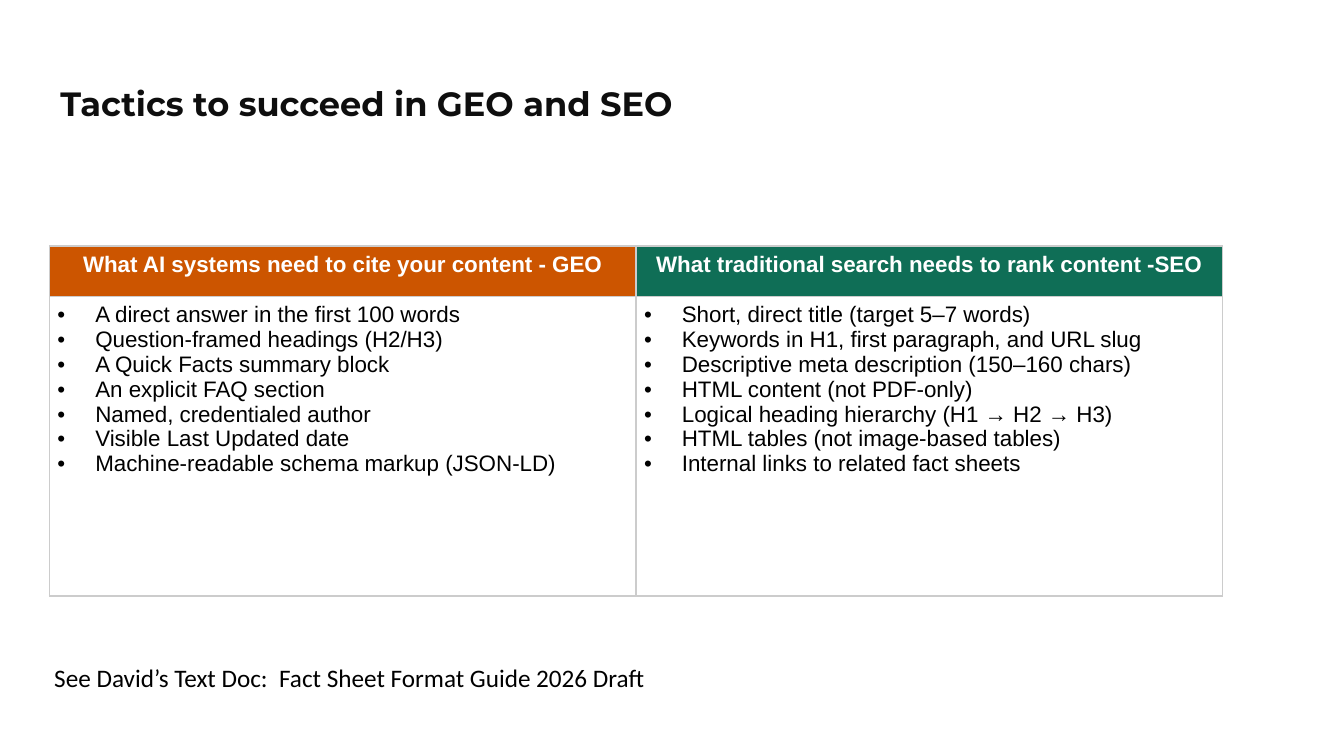
from dataclasses import dataclass

from lxml import etree
from pptx import Presentation
from pptx.dml.color import RGBColor
from pptx.enum.text import MSO_ANCHOR, MSO_AUTO_SIZE, PP_ALIGN
from pptx.oxml.ns import qn
from pptx.util import Pt

LEFT, CENTER = PP_ALIGN.LEFT, PP_ALIGN.CENTER
TOP = MSO_ANCHOR.TOP
NO_FIT, GROW = MSO_AUTO_SIZE.NONE, MSO_AUTO_SIZE.SHAPE_TO_FIT_TEXT
TITLE_ONLY = 5


@dataclass(frozen=True)
class Theme:
    ink: str = "0E0E0E"
    black: str = "000000"
    white: str = "FFFFFF"
    orange: str = "CC5500"
    green: str = "0F6E56"
    border: str = "CCCCCC"
    title_font: str = "Montserrat"
    table_font: str = "Arial"
    note_font: str = "Calibri"
    title_size: int = 24
    table_size: int = 16
    note_size: int = 18


THEME = Theme()

TITLE = "Tactics to succeed in GEO and SEO"
NOTE = "See David’s Text Doc:  Fact Sheet Format Guide 2026 Draft"
TACTICS = [
    ("What AI systems need to cite your content - GEO", THEME.orange, [
        "A direct answer in the first 100 words",
        "Question-framed headings (H2/H3)",
        "A Quick Facts summary block",
        "An explicit FAQ section",
        "Named, credentialed author",
        "Visible Last Updated date",
        "Machine-readable schema markup (JSON-LD)",
    ]),
    ("What traditional search needs to rank content -SEO", THEME.green, [
        "Short, direct title (target 5–7 words)",
        "Keywords in H1, first paragraph, and URL slug",
        "Descriptive meta description (150–160 chars)",
        "HTML content (not PDF-only)",
        "Logical heading hierarchy (H1 → H2 → H3)",
        "HTML tables (not image-based tables)",
        "Internal links to related fact sheets",
    ]),
]


def add_run(paragraph, text, font_name, size, color, bold=False):
    run = paragraph.add_run()
    run.text = text
    run.font.name = font_name
    run.font.size = Pt(size)
    run.font.bold = bold
    run.font.color.rgb = RGBColor.from_string(color)


def add_bullet(paragraph, indent):
    properties = paragraph._p.get_or_add_pPr()
    properties.set("marL", str(Pt(indent)))
    properties.set("indent", str(-Pt(indent)))
    etree.SubElement(properties, qn("a:buFont"), typeface=THEME.table_font)
    etree.SubElement(properties, qn("a:buChar"), char="•")


def style_cell(cell, fill=None):
    cell.margin_left = cell.margin_right = Pt(5.76)
    cell.margin_top = cell.margin_bottom = Pt(4.32)
    cell.vertical_anchor = TOP
    # Borders come before the fill in the cell properties
    properties = cell._tc.get_or_add_tcPr()
    for side in ("lnL", "lnR", "lnT", "lnB"):
        line = etree.SubElement(properties, qn(f"a:{side}"), w=str(Pt(1)))
        solid = etree.SubElement(line, qn("a:solidFill"))
        etree.SubElement(solid, qn("a:srgbClr"), val=THEME.border)
    if fill:
        cell.fill.solid()
        cell.fill.fore_color.rgb = RGBColor.from_string(fill)
    else:
        cell.fill.background()


def fill_title(slide, left, top, width, height):
    title = slide.shapes.title
    title.left, title.top, title.width, title.height = map(Pt, (left, top, width, height))
    frame = title.text_frame
    frame.margin_left = frame.margin_right = frame.margin_top = frame.margin_bottom = 0
    frame.vertical_anchor = TOP
    frame.word_wrap = True
    frame.auto_size = NO_FIT
    paragraph = frame.paragraphs[0]
    paragraph.alignment = LEFT
    paragraph.line_spacing = Pt(32)
    add_run(paragraph, TITLE, THEME.title_font, THEME.title_size, THEME.ink, bold=True)


def add_tactics_table(slide, left, top, width, height, header_height=36):
    frame = slide.shapes.add_table(2, len(TACTICS), Pt(left), Pt(top), Pt(width), Pt(height))
    table = frame.table
    table.horz_banding = False
    table.rows[0].height = Pt(header_height)
    table.rows[1].height = Pt(height - header_height)
    for column, (heading, color, tactics) in enumerate(TACTICS):
        table.columns[column].width = Pt(width / len(TACTICS))
        # Heading
        header = table.cell(0, column)
        style_cell(header, color)
        paragraph = header.text_frame.paragraphs[0]
        paragraph.alignment = CENTER
        add_run(paragraph, heading, THEME.table_font, THEME.table_size, THEME.white, bold=True)
        # Bulleted tactics
        body = table.cell(1, column)
        style_cell(body)
        for index, tactic in enumerate(tactics):
            text_frame = body.text_frame
            paragraph = text_frame.add_paragraph() if index else text_frame.paragraphs[0]
            add_bullet(paragraph, indent=27)
            add_run(paragraph, tactic, THEME.table_font, THEME.table_size, THEME.black)


def add_note(slide, left, top, width, height):
    note = slide.shapes.add_textbox(Pt(left), Pt(top), Pt(width), Pt(height))
    note.text_frame.word_wrap = False
    note.text_frame.auto_size = GROW
    add_run(note.text_frame.paragraphs[0], NOTE, THEME.note_font, THEME.note_size, THEME.black)


def main():
    presentation = Presentation()
    presentation.slide_width = Pt(960)
    presentation.slide_height = Pt(540)
    slide = presentation.slides.add_slide(presentation.slide_layouts[TITLE_ONLY])
    fill_title(slide, 43.2, 56.2, 871, 68.4)
    add_tactics_table(slide, 35.3, 175.7, 838, 250)
    add_note(slide, 31.7, 469.4, 448.6, 29)
    presentation.save("out.pptx")


if __name__ == "__main__":
    main()
